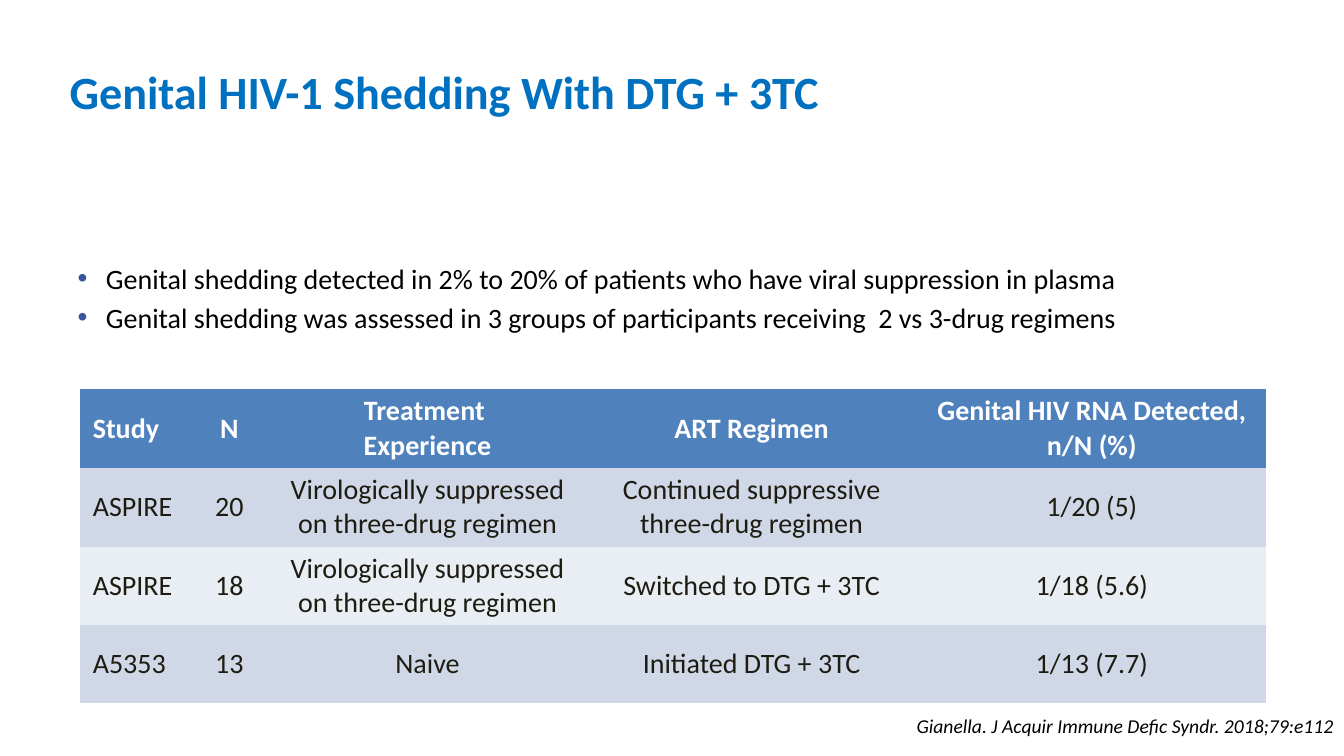
from dataclasses import dataclass

from lxml import etree
from pptx import Presentation
from pptx.dml.color import RGBColor
from pptx.enum.text import MSO_ANCHOR, MSO_AUTO_SIZE, PP_ALIGN
from pptx.oxml.ns import qn
from pptx.util import Inches, Pt

LEFT, MID, RIGHT = PP_ALIGN.LEFT, PP_ALIGN.CENTER, PP_ALIGN.RIGHT
TOP, CENTRE, BOTTOM = MSO_ANCHOR.TOP, MSO_ANCHOR.MIDDLE, MSO_ANCHOR.BOTTOM
FIXED = MSO_AUTO_SIZE.NONE

WIDE, HIGH = Inches(13.33), Inches(7.5)
FONT = "Calibri"
PLAIN = "{2D5ABB26-0587-4C30-8999-92F81FD0307C}"  # table style without grid
COLORS = {
    "title": "0070C0", "text": "000000", "bullet": "3C549F",
    "head": "4F81BD", "white": "FFFFFF", "cell": "1E1C11",
    "odd": "D0D8E8", "even": "E9EDF4",
}


@dataclass
class Box:
    """A frame in percent of the slide's width and height."""
    x: float
    y: float
    w: float
    h: float

    def frame(self) -> tuple[int, int, int, int]:
        return across(self.x), down(self.y), across(self.w), down(self.h)


@dataclass
class Style:
    size: float
    color: str
    bold: bool = False
    italic: bool = False


@dataclass
class Column:
    width: float
    align: PP_ALIGN
    head: str
    cells: list[str]


TITLE = Box(4.43, 3.73, 69, 16.67)
BODY = Box(5.03, 33.87, 90, 12)
TABLE = Box(5.93, 51.47, 88.29, 41.08)
SOURCE = Box(67.14, 94.13, 32.86, 4.13)

POINTS = [
    "Genital shedding detected in 2% to 20% of patients who have viral suppression in plasma",
    "Genital shedding was assessed in 3 groups of participants receiving  2 vs 3-drug regimens",
]
STABLE = "Virologically suppressed on three-drug regimen"
COLUMNS = [
    Column(8.18, LEFT, "Study", ["ASPIRE", "ASPIRE", "A5353"]),
    Column(5.93, MID, "N", ["20", "18", "13"]),
    Column(23.55, MID, "Treatment \nExperience", [STABLE, STABLE, "Naive"]),
    Column(24.68, MID, "ART Regimen",
           ["Continued suppressive three-drug regimen",
            "Switched to DTG + 3TC", "Initiated DTG + 3TC"]),
    Column(25.95, MID, "Genital HIV RNA Detected, n/N (%)",
           ["1/20 (5)", "1/18 (5.6)", "1/13 (7.7)"]),
]


def across(share: float) -> int:
    return round(WIDE * share / 100)


def down(share: float) -> int:
    return round(HIGH * share / 100)


def color(name: str) -> RGBColor:
    return RGBColor.from_string(COLORS[name])


def write(frame, lines: list[str], style: Style, align: PP_ALIGN) -> None:
    for i, line in enumerate(lines):
        para = frame.paragraphs[0] if i == 0 else frame.add_paragraph()
        para.alignment = align
        run = para.add_run()
        run.text = line
        font = run.font
        font.name, font.size = FONT, Pt(style.size)
        font.bold, font.italic = style.bold, style.italic
        font.color.rgb = color(style.color)


def place(shape, box: Box, anchor: MSO_ANCHOR, wrap: bool = True):
    """Move a text shape and return its text frame."""
    shape.left, shape.top, shape.width, shape.height = box.frame()
    frame = shape.text_frame
    frame.auto_size, frame.word_wrap = FIXED, wrap
    frame.vertical_anchor = anchor
    return frame


def bullet(para) -> None:
    props = para._p.get_or_add_pPr()
    indent = Inches(0.28)
    props.set("marL", str(indent))
    props.set("indent", str(-indent))
    tint = etree.SubElement(props, qn("a:buClr"))
    etree.SubElement(tint, qn("a:srgbClr"), val=COLORS["bullet"])
    etree.SubElement(props, qn("a:buFont"), typeface="Arial")
    etree.SubElement(props, qn("a:buChar"), char="•")


def fill_cell(cell, text: str, align: PP_ALIGN, style: Style, fill: str) -> None:
    cell.fill.solid()
    cell.fill.fore_color.rgb = color(fill)
    cell.vertical_anchor = CENTRE
    cell.margin_left = cell.margin_right = Inches(0.13)
    cell.margin_top = cell.margin_bottom = Inches(0.05)
    write(cell.text_frame, text.split("\n"), style, align)


def add_grid(slide) -> None:
    count = len(COLUMNS[0].cells) + 1
    table = slide.shapes.add_table(count, len(COLUMNS), *TABLE.frame()).table
    table._tbl.tblPr.find(qn("a:tableStyleId")).text = PLAIN
    for row in table.rows:
        row.height = down(TABLE.h / count)
    head, plain = Style(20, "white", bold=True), Style(20, "cell")
    for c, col in enumerate(COLUMNS):
        table.columns[c].width = across(col.width)
        fill_cell(table.cell(0, c), col.head, col.align, head, "head")
        for r, text in enumerate(col.cells, 1):
            band = "odd" if r % 2 else "even"
            fill_cell(table.cell(r, c), text, col.align, plain, band)


def main() -> None:
    deck = Presentation()
    deck.slide_width, deck.slide_height = WIDE, HIGH
    slide = deck.slides.add_slide(deck.slide_layouts[1])

    title = place(slide.shapes.title, TITLE, CENTRE)
    write(title, ["Genital HIV-1 Shedding With DTG + 3TC"],
          Style(33, "title", bold=True), LEFT)

    body = place(slide.placeholders[1], BODY, TOP)
    write(body, POINTS, Style(20, "text"), LEFT)
    for i, para in enumerate(body.paragraphs):
        bullet(para)
        para.space_before = Pt(4 if i else 0)

    add_grid(slide)

    note = place(slide.shapes.add_textbox(*SOURCE.frame()), SOURCE, BOTTOM, wrap=False)
    write(note, ["Gianella. J Acquir Immune Defic Syndr. 2018;79:e112"],
          Style(14, "text", italic=True), RIGHT)
    note.paragraphs[0].line_spacing = 0.9

    deck.save("out.pptx")


if __name__ == "__main__":
    main()
